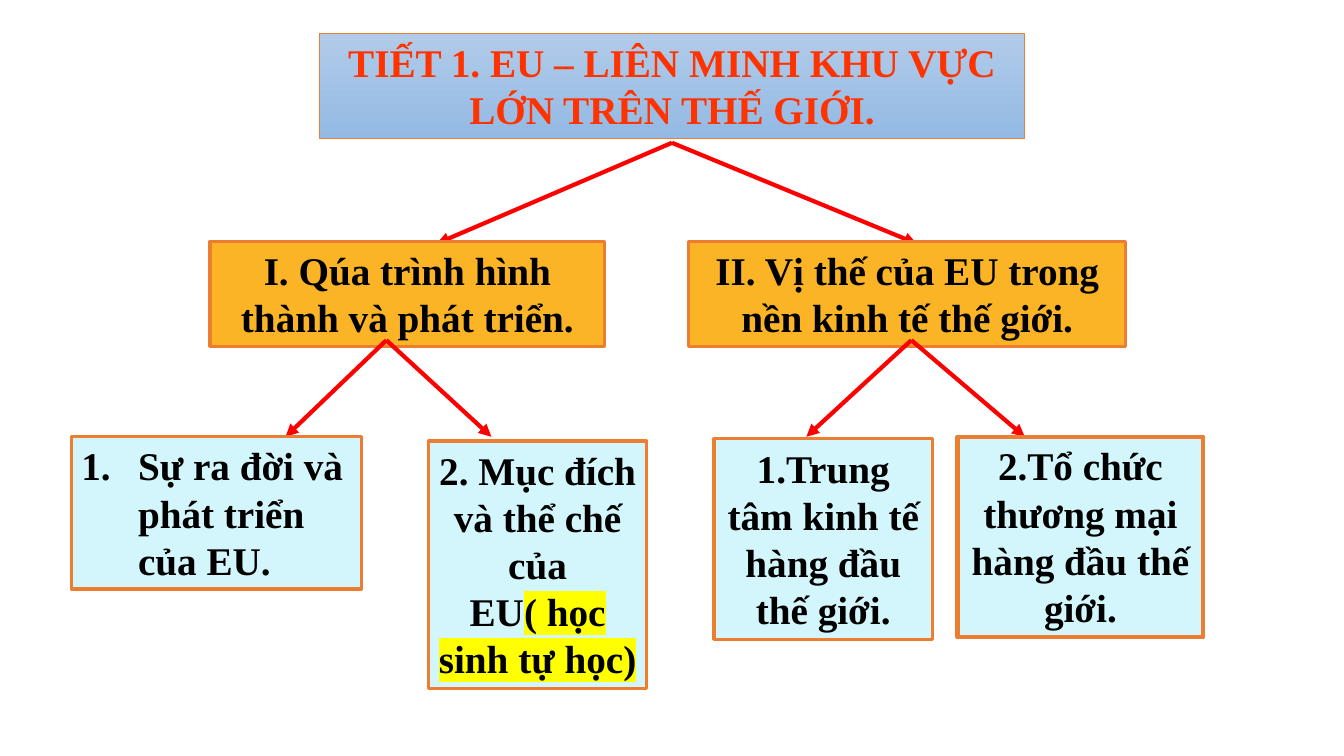
"""Draw a tree of the lesson's topics on the European Union."""
from dataclasses import dataclass

from lxml.etree import SubElement
from pptx import Presentation
from pptx.dml.color import RGBColor
from pptx.enum.shapes import MSO_CONNECTOR, MSO_SHAPE
from pptx.enum.text import MSO_ANCHOR, MSO_AUTO_SIZE, PP_ALIGN
from pptx.oxml import parse_xml
from pptx.oxml.ns import nsdecls, qn
from pptx.slide import Slide
from pptx.util import Pt

PX = 9525
FONT = "Times New Roman"
BLACK = RGBColor(0x00, 0x00, 0x00)
RED = RGBColor(0xFF, 0x00, 0x00)
SCARLET = RGBColor(0xFF, 0x33, 0x00)
RUST = RGBColor(0xED, 0x7D, 0x31)
AMBER = RGBColor(0xFB, 0xB4, 0x25)
ICE = RGBColor(0xD3, 0xF6, 0xFD)
SKY = RGBColor(0xB1, 0xCB, 0xE9)
STEEL = RGBColor(0x93, 0xB9, 0xE4)
YELLOW = RGBColor(0xFF, 0xFF, 0x00)


@dataclass(frozen=True)
class Box:
    """A topic box, with its place in px and its line width in points."""

    text: str
    left: int
    top: int
    width: int
    height: int
    fills: tuple[RGBColor, ...]
    line: float = 2.25
    color: RGBColor = BLACK
    marked: str = ""
    listed: bool = False


@dataclass(frozen=True)
class Fork:
    """Two arrows that part at one point and end at the same height."""

    x: int
    y: int
    ends: tuple[int, int]
    base: int


TITLE = Box("TIẾT 1. EU – LIÊN MINH KHU VỰC LỚN TRÊN THẾ GIỚI.",
            304, 32, 672, 100, (SKY, STEEL), line=0.5, color=SCARLET)
PARTS = (
    Box("I. Qúa trình hình thành và phát triển.", 200, 230, 376, 100, (AMBER,)),
    Box("II. Vị thế của EU trong nền kinh tế thế giới.",
        656, 230, 416, 100, (AMBER,)),
)
LEAVES = (
    Box("Sự ra đời và phát triển của EU.", 68, 416, 276, 145, (ICE,),
        listed=True),
    Box("2. Mục đích và thể chế của EU", 408, 420, 208, 236, (ICE,),
        marked="( học sinh tự học)"),
    Box("1.Trung tâm kinh tế hàng đầu thế giới.", 680, 418, 208, 191, (ICE,)),
    Box("2.Tổ chức thương mại hàng đầu thế giới.", 912, 416, 234, 191, (ICE,),
        line=3),
)
ROOT = Fork(640, 136, (416, 873), 232)
TWIGS = (Fork(368, 324, (272, 468), 416), Fork(868, 324, (768, 976), 416))


def draw_box(slide: Slide, box: Box) -> None:
    """Draw a topic box with its text."""
    shape = slide.shapes.add_shape(
        MSO_SHAPE.RECTANGLE, box.left * PX, box.top * PX,
        box.width * PX, box.height * PX)
    shape.shadow.inherit = False
    if len(box.fills) > 1:
        shape.fill.gradient()
        shape.fill.gradient_angle = 270
        for stop, color in zip(shape.fill.gradient_stops, box.fills):
            stop.color.rgb = color
    else:
        shape.fill.solid()
        shape.fill.fore_color.rgb = box.fills[0]
    shape.line.color.rgb = RUST
    shape.line.width = Pt(box.line)

    frame = shape.text_frame
    frame.text = box.text
    frame.word_wrap = True
    frame.auto_size = MSO_AUTO_SIZE.SHAPE_TO_FIT_TEXT
    frame.vertical_anchor = MSO_ANCHOR.TOP
    para = frame.paragraphs[0]
    para.alignment = PP_ALIGN.LEFT if box.listed else PP_ALIGN.CENTER
    if box.listed:
        props = para._p.get_or_add_pPr()
        props.set("marL", str(54 * PX))
        props.set("indent", str(-54 * PX))
        SubElement(props, qn("a:buFont"), typeface="+mj-lt")
        SubElement(props, qn("a:buAutoNum"), type="arabicPeriod")
    if box.marked:
        para.add_run().text = box.marked
    for run in para.runs:
        run.font.name = FONT
        run.font.size = Pt(28)
        run.font.bold = True
        run.font.color.rgb = box.color
    if box.marked:
        fill = para.runs[-1]._r.get_or_add_rPr().find(qn("a:solidFill"))
        fill.addnext(parse_xml(
            f'<a:highlight {nsdecls("a")}><a:srgbClr val="{YELLOW}"/>'
            "</a:highlight>"))


def draw_fork(slide: Slide, fork: Fork) -> None:
    """Draw both arrows of a fork."""
    for end in fork.ends:
        arrow = slide.shapes.add_connector(
            MSO_CONNECTOR.STRAIGHT, fork.x * PX, fork.y * PX,
            end * PX, fork.base * PX)
        arrow.line.color.rgb = RED
        arrow.line.width = Pt(3)
        SubElement(arrow.line._get_or_add_ln(), qn("a:tailEnd"),
                   type="triangle")
        SubElement(arrow._element.spPr, qn("a:effectLst"))


def main() -> None:
    """Build the slide and save it."""
    deck = Presentation()
    deck.slide_width = 1280 * PX
    deck.slide_height = 720 * PX
    slide = deck.slides.add_slide(deck.slide_layouts[6])
    draw_box(slide, TITLE)
    draw_fork(slide, ROOT)
    for part in PARTS:
        draw_box(slide, part)
    for twig in TWIGS:
        draw_fork(slide, twig)
    for leaf in LEAVES:
        draw_box(slide, leaf)
    deck.save("out.pptx")


if __name__ == "__main__":
    main()
